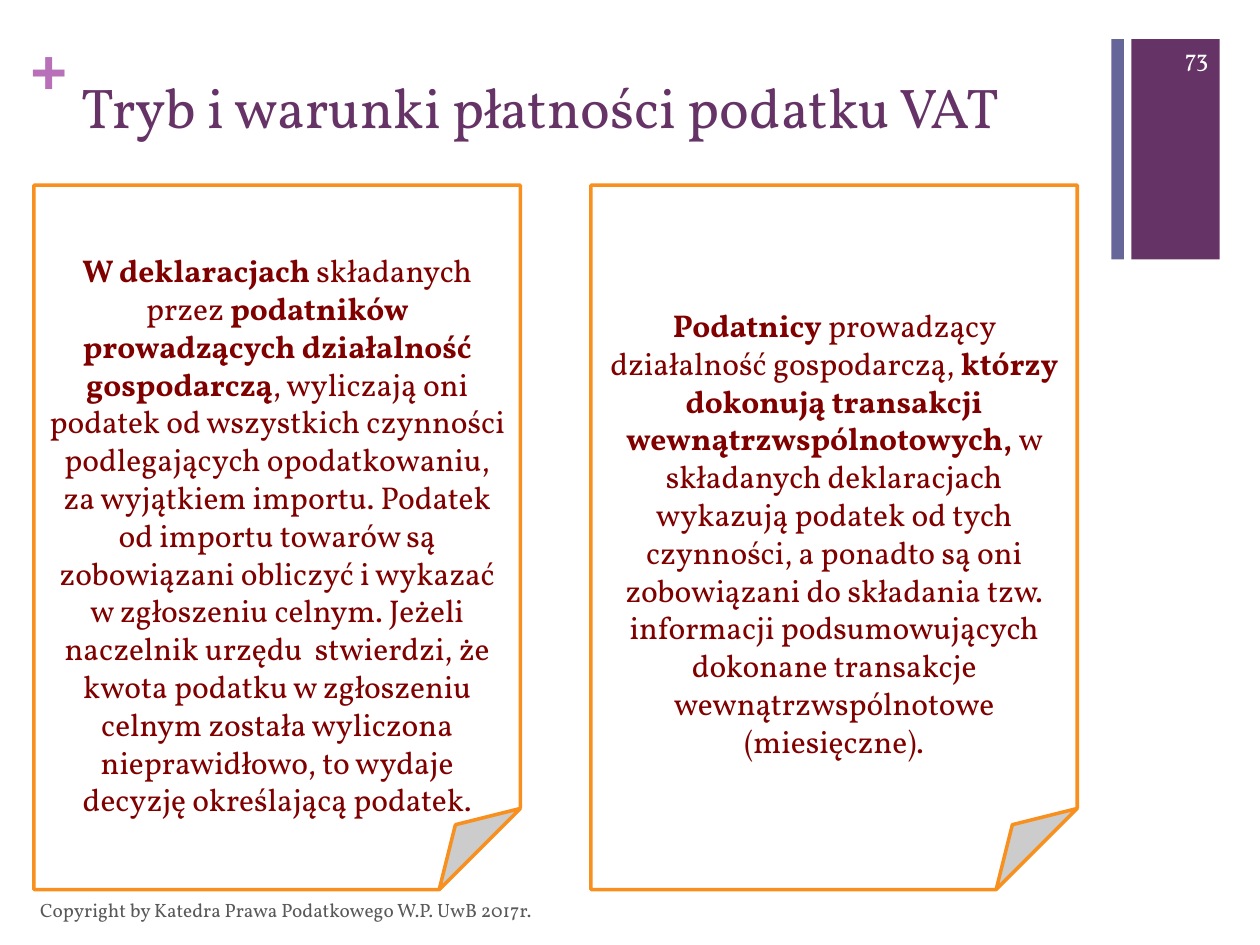
import pptx
import pptx.dml.color
import pptx.enum.shapes
import pptx.enum.text
import pptx.util

COLOURS = {
    "plum": "663366", "slate": "666699", "orchid": "B870B8", "grey": "595959",
    "maroon": "800000", "orange": "F7901E", "white": "FFFFFF",
}
ALIGN = pptx.enum.text.PP_ALIGN
ANCHOR = pptx.enum.text.MSO_ANCHOR
SHAPE = pptx.enum.shapes.MSO_SHAPE


class SlideBuilder:
    """Holds the style and current slide, placing elements on a 100 by 75 grid."""

    columns, rows = 100, 75
    formats = {
        "title": {"size": 32, "name": "Vollkorn", "colour": "plum"},
        "plus": {"size": 36, "name": "Arial", "colour": "orchid", "bold": True},
        "footer": {"size": 11, "name": "Vollkorn", "colour": "grey"},
        "number": {"size": 14, "name": "Vollkorn", "colour": "white"},
        "note": {"size": 18, "name": "Vollkorn", "colour": "maroon"},
    }

    def __init__(self, deck):
        self.deck = deck
        self.page = deck.slides.add_slide(deck.slide_layouts[6])

    def place(self, left, top, width, height):
        column = self.deck.slide_width / self.columns
        row = self.deck.slide_height / self.rows
        return [round(value * unit) for value, unit in
                zip((left, top, width, height), (column, row, column, row))]

    def colour(self, name):
        return pptx.dml.color.RGBColor.from_string(COLOURS[name])

    def fill_text(self, frame, spans, style, align, **frame_format):
        for key, value in {"word_wrap": True, **frame_format}.items():
            setattr(frame, key, value)
        para = frame.paragraphs[0]
        para.alignment = align
        for text, bold in spans:
            span = para.add_run()
            span.text = text
            values = {"bold": bold, **self.formats[style]}
            span.font.color.rgb = self.colour(values.pop("colour"))
            values["size"] = pptx.util.Pt(values["size"])
            for key, value in values.items():
                setattr(span.font, key, value)

    def text(self, place, text, style, align=ALIGN.LEFT, **frame_format):
        box = self.page.shapes.add_textbox(*self.place(*place))
        self.fill_text(box.text_frame, [(text, False)], style, align, **frame_format)

    def shape(self, kind, place, fill, line=None):
        shape = self.page.shapes.add_shape(kind, *self.place(*place))
        shape.shadow.inherit = False
        shape.fill.solid()
        shape.fill.fore_color.rgb = self.colour(fill)
        if line:
            shape.line.color.rgb = self.colour(line)
            shape.line.width = pptx.util.Pt(2)
        else:
            shape.line.fill.background()
        return shape

    def note(self, place, spans, drop):
        sheet = self.shape(SHAPE.FOLDED_CORNER, place, "white", "orange")
        self.fill_text(sheet.text_frame, spans, "note", ALIGN.CENTER,
                       vertical_anchor=ANCHOR.MIDDLE, margin_top=pptx.util.Inches(drop))


def main():
    deck = pptx.Presentation()
    deck.slide_width, deck.slide_height = pptx.util.Inches(10), pptx.util.Inches(7.5)
    builder = SlideBuilder(deck)

    for left, width, fill in ((89.8, 7, "plum"), (88.2, 1, "slate")):
        builder.shape(SHAPE.RECTANGLE, (left, 3.1, width, 17.5), fill)
    no_margins = {f"margin_{side}": 0 for side in ("left", "top", "right", "bottom")}
    builder.text((2.4, 2.5, 2.9, 6.1), "+", "plus", **no_margins)
    builder.text((5.5, 5.3, 82.6, 12.2), "Tryb i warunki płatności podatku VAT", "title")
    builder.text((2.2, 70.2, 67, 4), "Copyright by Katedra Prawa Podatkowego W.P. UwB 2017r.",
                 "footer", vertical_anchor=ANCHOR.MIDDLE)
    builder.text((90.8, 2.6, 6.1, 4), "73", "number", ALIGN.RIGHT,
                 vertical_anchor=ANCHOR.MIDDLE)

    notes = (
        (0.65, [
            ("W deklaracjach ", True),
            ("składanych przez", False),
            (" podatników prowadzących działalność gospodarczą", True),
            (", wyliczają oni podatek od wszystkich czynności podlegających "
             "opodatkowaniu, za wyjątkiem importu. Podatek od importu towarów są "
             "zobowiązani obliczyć i wykazać w zgłoszeniu celnym. Jeżeli naczelnik "
             "urzędu  stwierdzi, że kwota podatku w zgłoszeniu celnym została "
             "wyliczona nieprawidłowo, to wydaje decyzję określającą podatek.", False),
        ]),
        (0.62, [
            ("Podatnicy", True),
            (" prowadzący działalność gospodarczą, ", False),
            ("którzy dokonują transakcji wewnątrzwspólnotowych, ", True),
            ("w składanych deklaracjach wykazują podatek od tych czynności, a ponadto "
             "są oni zobowiązani do składania tzw. informacji podsumowujących dokonane "
             "transakcje wewnątrzwspólnotowe (miesięczne).", False),
        ]),
    )
    for index, (drop, spans) in enumerate(notes):
        builder.note((2.7 + 44.2 * index, 14.7, 38.6, 55.9), spans, drop)

    deck.save("out.pptx")


if __name__ == "__main__":
    main()
